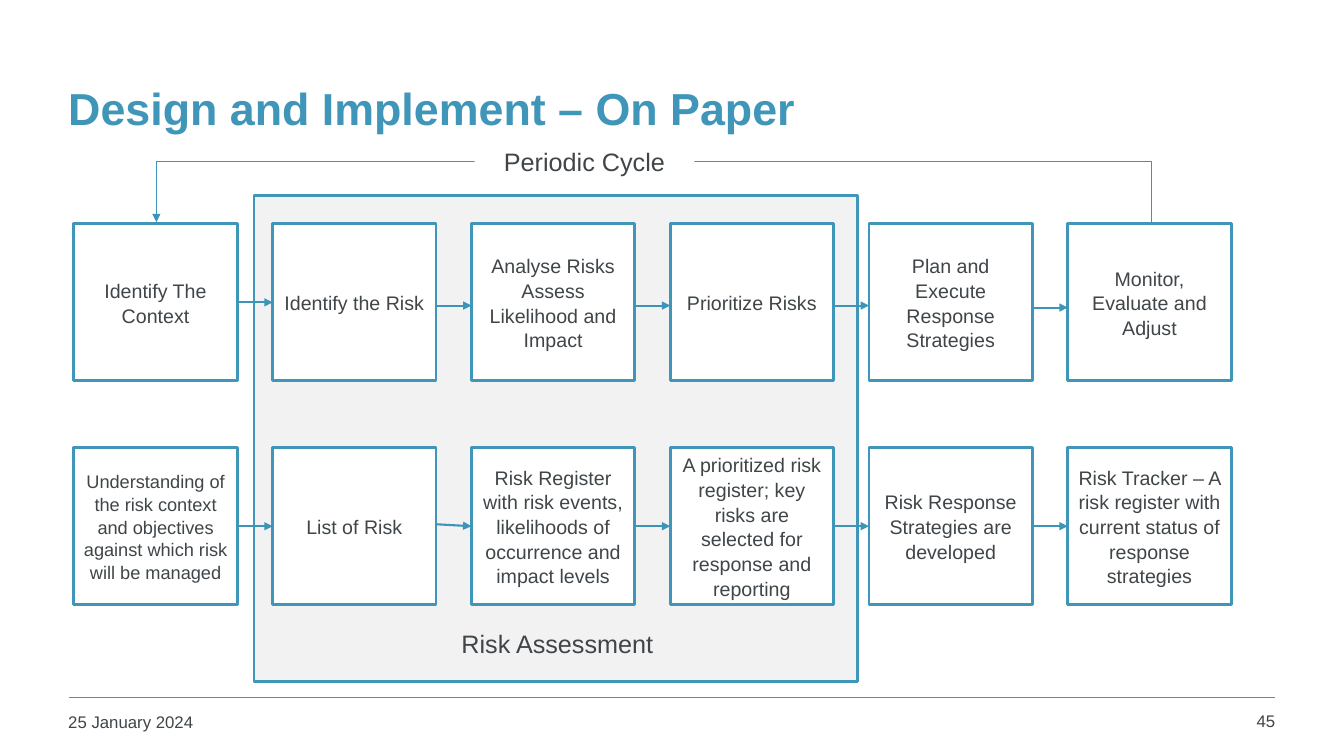
from dataclasses import dataclass

from lxml import etree
from pptx import Presentation
from pptx import util as u
from pptx.dml.color import RGBColor
from pptx.enum import shapes, text
from pptx.oxml import ns


@dataclass(frozen=True)
class Theme:
    """Colours, font and type sizes of the slide."""
    accent: str = "4096B8"
    arrow: str = "3C94B7"
    ink: str = "3F4548"
    panel: str = "F2F2F2"
    paper: str = "FFFFFF"
    font: str = "Arial"
    title: int = 32
    label: int = 18
    step: int = 14
    small_step: int = 13
    footer: int = 12


class Board:
    """Draws styled elements on one slide."""

    def __init__(self, slide, theme):
        """Keep the slide and its theme."""
        self.shapes = slide.shapes
        self.theme = theme

    def set_words(self, shape, words, size, align, colour=None, bold=False, spacing=1.0):
        """Fill a shape with styled text, one paragraph per line."""
        frame = shape.text_frame
        frame.word_wrap = True
        frame.text = words
        for paragraph in frame.paragraphs:
            paragraph.alignment = align
            paragraph.line_spacing = spacing
            font = paragraph.font
            font.name, font.size, font.bold = self.theme.font, u.Pt(size), bold
            font.color.rgb = RGBColor.from_string(colour or self.theme.ink)
        return frame

    def label(self, area, words, size, align=text.PP_ALIGN.LEFT, **style):
        """Add a text box."""
        box = self.shapes.add_textbox(*map(u.Cm, area))
        return self.set_words(box, words, size, align, **style)

    def rect(self, area, fill, outlined=True):
        """Add a flat rectangle."""
        shape = self.shapes.add_shape(shapes.MSO_SHAPE.RECTANGLE, *map(u.Cm, area))
        shape.shadow.inherit = False
        shape.fill.solid()
        shape.fill.fore_color.rgb = RGBColor.from_string(fill)
        if outlined:
            shape.line.color.rgb = RGBColor.from_string(self.theme.accent)
            shape.line.width = u.Pt(2)
        else:
            shape.line.fill.background()
        return shape

    def step(self, area, words, size):
        """Add a process box with centred text."""
        box = self.rect(area, self.theme.paper)
        frame = self.set_words(box, words, size, text.PP_ALIGN.CENTER, spacing=1.05)
        frame.vertical_anchor = text.MSO_ANCHOR.MIDDLE

    def line(self, start, end, colour, width, arrow=True, kind=shapes.MSO_CONNECTOR.STRAIGHT):
        """Add a connector, with an arrowhead if wanted."""
        connector = self.shapes.add_connector(kind, *map(u.Cm, (*start, *end)))
        connector.line.color.rgb = RGBColor.from_string(colour)
        connector.line.width = u.Pt(width)
        properties = connector._element.spPr
        if arrow:
            outline = properties.find(ns.qn("a:ln"))
            etree.SubElement(outline, ns.qn("a:tailEnd"), type="triangle")
        etree.SubElement(properties, ns.qn("a:effectLst"))
        return connector

    def loop(self, right, left, bottom, rise):
        """Add an elbow arrow that goes up, left and down again."""
        drop, span = 0.03, right - left
        x, y = (right + left - drop) / 2, bottom - (drop + span) / 2
        elbow = self.line((x, y + span), (x + drop, y), self.theme.arrow, 0.75,
                          kind=shapes.MSO_CONNECTOR.ELBOW)
        properties = elbow._element.spPr
        properties.find(ns.qn("a:xfrm")).set("rot", str(270 * 60000))
        bends = properties.find(ns.qn("a:prstGeom")).get_or_add_avLst()
        etree.SubElement(bends, ns.qn("a:gd"), name="adj1",
                         fmla=f"val {round(rise / drop * 100000)}")


LEFT, PITCH, WIDTH, HEIGHT = 1.86, 5.01, 4.12, 3.96
STAGES_TOP, OUTPUTS_TOP = 5.64, 11.28
STAGES = ["Identify The Context", "Identify the Risk",
          "Analyse Risks\nAssess Likelihood and Impact", "Prioritize Risks",
          "Plan and Execute Response Strategies", "Monitor, Evaluate and Adjust"]
OUTPUTS = ["Understanding of the risk context and objectives against which risk will be managed",
           "List of Risk",
           "Risk Register with risk events, likelihoods of occurrence and impact levels",
           "A prioritized risk register; key risks are selected for response and reporting",
           "Risk Response Strategies are developed",
           "Risk Tracker – A risk register with current status of response strategies"]
STAGE_ARROWS = [(7.62, 7.62), (7.7, 7.7), (7.7, 7.7), (7.7, 7.7), (7.75, 7.75)]
OUTPUT_ARROWS = [(13.26, 13.26), (13.21, 13.26)] + [(13.26, 13.26)] * 3


def main():
    """Build the slide and save it."""
    deck = Presentation()
    deck.slide_width, deck.slide_height = u.Cm(33.87), u.Cm(19.05)
    theme = Theme()
    board = Board(deck.slides.add_slide(deck.slide_layouts[6]), theme)

    board.line((1.73, 17.58), (32.13, 17.58), theme.accent, 1, arrow=False)
    board.rect((6.4, 4.93, 15.21, 12.24), theme.panel)
    title = board.label((1.47, 1.12, 30.71, 3.18), "Design and Implement – On Paper",
                        theme.title, colour=theme.accent, bold=True)
    title.vertical_anchor = text.MSO_ANCHOR.MIDDLE
    board.label((1.47, 17.81, 7.47, 0.91), "25 January 2024", theme.footer)
    board.label((30, 17.78, 2.39, 0.94), "45", theme.footer, text.PP_ALIGN.RIGHT)

    for top, steps, arrows in ((STAGES_TOP, STAGES, STAGE_ARROWS),
                               (OUTPUTS_TOP, OUTPUTS, OUTPUT_ARROWS)):
        for column, words in enumerate(steps):
            size = theme.small_step if words == OUTPUTS[0] else theme.step
            board.step((LEFT + column * PITCH, top, WIDTH, HEIGHT), words, size)
        for column, (start, end) in enumerate(arrows):
            x = LEFT + column * PITCH
            board.line((x + WIDTH, start), (x + PITCH, end), theme.arrow, 1.5)

    board.label((11.38, 15.7, 5.54, 1.02), "Risk Assessment", theme.label)
    board.loop(right=29.01, left=3.94, bottom=5.63, rise=1.55)
    cycle = board.rect((11.96, 3.56, 5.54, 1.02), theme.paper, outlined=False)
    board.set_words(cycle, "Periodic Cycle", theme.label, text.PP_ALIGN.CENTER)
    deck.save("out.pptx")


if __name__ == "__main__":
    main()
